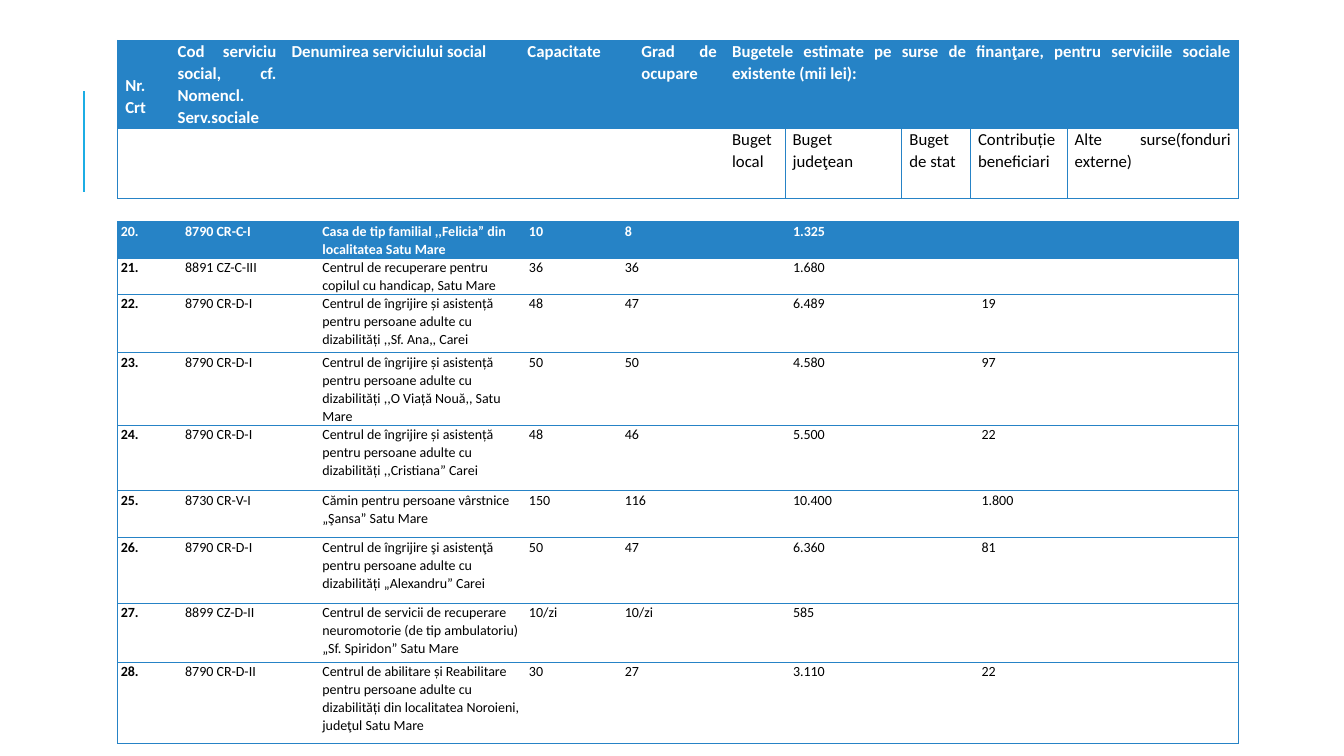
from pptx import Presentation
from pptx.dml.color import RGBColor
from pptx.enum.shapes import MSO_CONNECTOR
from pptx.enum.text import PP_ALIGN
from pptx.oxml.xmlchemy import OxmlElement
from pptx.util import Pt

JUSTIFY, LEFT = PP_ALIGN.JUSTIFY, PP_ALIGN.LEFT
STRAIGHT = MSO_CONNECTOR.STRAIGHT
BLUE, WHITE, BLACK, ACCENT = "2683C6", "FFFFFF", "000000", "1CADE4"


def color(hex_string):
    return RGBColor.from_string(hex_string)


def format_cell(cell, text, look, sides):
    """Write a cell; sides names the edges (L, R, T, B) that get a blue line."""
    for side in "LRTB":
        edge = OxmlElement(f"a:ln{side}")
        edge.set("w", str(Pt(0.75)))
        paint = OxmlElement("a:solidFill" if side in sides else "a:noFill")
        if side in sides:
            tone = OxmlElement("a:srgbClr")
            tone.set("val", BLUE)
            paint.append(tone)
        edge.append(paint)
        cell._tc.get_or_add_tcPr().append(edge)
    cell.fill.solid()
    cell.fill.fore_color.rgb = color(look["fill"])
    margins = {"margin_left": look["inset"], "margin_right": look["inset"],
               "margin_top": look.get("top", 0), "margin_bottom": 0}
    for name, value in margins.items():
        setattr(cell, name, Pt(value))
    if not text:
        return
    para = cell.text_frame.paragraphs[0]
    para_format = {"alignment": look.get("align", JUSTIFY),
                   "line_spacing": look["spacing"], "space_after": Pt(8)}
    for name, value in para_format.items():
        setattr(para, name, value)
    span = para.add_run()
    span.text = text
    font_format = {"name": "Calibri", "size": Pt(look["size"]), "bold": look["bold"]}
    for name, value in font_format.items():
        setattr(span.font, name, value)
    span.font.color.rgb = color(look["color"])


heading_widths = [37.4, 81.4, 168.5, 81.4, 64.8, 43.2, 83.5, 49, 69.1, 122.4]
heading_heights = [62.1, 50.7]
headings = [
    ["Nr. Crt", "Cod serviciu social, cf. Nomencl. Serv.sociale",
     "Denumirea serviciului social", "Capacitate", "Grad de ocupare",
     "Bugetele estimate pe surse de finanţare, pentru serviciile sociale existente (mii lei):",
     "", "", "", ""],
    ["", "", "", "", "", "Buget local", "Buget judeţean", "Buget de stat",
     "Contribuție beneficiari", "Alte surse(fonduri externe)"],
]

service_widths = [46, 98, 147.6, 68.4, 54, 66.2, 85, 49.7, 128.2, 57.6]
# Row height, number, code, name, capacity, occupancy, county budget, contribution
services = [
    (25.8, "20.", "8790 CR-C-I", "Casa de tip familial ,,Felicia” din localitatea Satu Mare",
     "10", "8", "1.325", ""),
    (26.2, "21.", "8891 CZ-C-III", "Centrul de recuperare pentru copilul cu handicap, Satu Mare",
     "36", "36", "1.680", ""),
    (41.6, "22.", "8790 CR-D-I",
     "Centrul de îngrijire și asistență pentru persoane adulte cu dizabilități ,,Sf. Ana,, Carei",
     "48", "47", "6.489", "19"),
    (51.5, "23.", "8790 CR-D-I",
     "Centrul de îngrijire și asistență pentru persoane adulte cu dizabilități "
     ",,O Viață Nouă,, Satu Mare",
     "50", "50", "4.580", "97"),
    (47, "24.", "8790 CR-D-I",
     "Centrul de îngrijire și asistență pentru persoane adulte cu dizabilități ,,Cristiana” Carei",
     "48", "46", "5.500", "22"),
    (33.7, "25.", "8730 CR-V-I", "Cămin pentru persoane vârstnice „Şansa” Satu Mare",
     "150", "116", "10.400", "1.800"),
    (47, "26.", "8790 CR-D-I",
     "Centrul de îngrijire şi asistenţă pentru persoane adulte cu dizabilități „Alexandru” Carei",
     "50", "47", "6.360", "81"),
    (42, "27.", "8899 CZ-D-II",
     "Centrul de servicii de recuperare neuromotorie (de tip ambulatoriu) "
     "„Sf. Spiridon” Satu Mare",
     "10/zi", "10/zi", "585", ""),
    (57.7, "28.", "8790 CR-D-II",
     "Centrul de abilitare și Reabilitare pentru persoane adulte cu dizabilități "
     "din localitatea Noroieni, judeţul Satu Mare",
     "30", "27", "3.110", "22"),
]
service_heights = [service[0] for service in services]
service_rows = [[number, code, name, capacity, occupancy, "", county, "", contribution, ""]
                for _, number, code, name, capacity, occupancy, county, contribution in services]

deck = Presentation()
deck.slide_width, deck.slide_height = Pt(960), Pt(540)
page = deck.slides.add_slide(deck.slide_layouts[6])

side_rule = page.shapes.add_connector(STRAIGHT, Pt(60), Pt(136.8), Pt(60), Pt(64.8))
side_rule.line.color.rgb = color(ACCENT)
side_rule.line.width = Pt(1.5)
side_rule._element.spPr.append(OxmlElement("a:effectLst"))

service_look = {"inset": 2.2, "size": 10, "spacing": 1.06}
heading_look = {"inset": 5.4, "size": 12, "spacing": 1.07}
tables = [
    (158.5, service_widths, service_heights, service_rows, service_look),
    (28.8, heading_widths, heading_heights, headings, heading_look),
]
for top, widths, heights, rows, base_look in tables:
    is_heading = rows is headings
    frame = page.shapes.add_table(len(rows), len(widths), Pt(84.1), Pt(top),
                                  Pt(sum(widths)), Pt(sum(heights)))
    table = frame.table
    table.first_row = is_heading
    table.horz_banding = False
    for column, width in zip(table.columns, widths):
        column.width = Pt(width)
    for row, height in zip(table.rows, heights):
        row.height = Pt(height)
    if is_heading:
        table.cell(0, 5).merge(table.cell(0, 9))
        table.cell(1, 0).merge(table.cell(1, 4))
    for r, texts in enumerate(rows):
        for c, text in enumerate(texts):
            first = r == 0
            look = dict(base_look, fill=BLUE if first else WHITE,
                        color=WHITE if first else BLACK,
                        bold=first or (c == 0 and not is_heading))
            if is_heading and first and c == 0:
                look["top"] = 24.3
            if not is_heading and c == 2:
                look["align"] = LEFT
            sides = "TB"
            if c == 0:
                sides += "L"
            if c == len(texts) - 1 or (is_heading and not first and c >= 5):
                sides += "R"
            if is_heading and not first and c > 5:
                sides += "L"
            format_cell(table.cell(r, c), text, look, sides)

deck.save("out.pptx")
